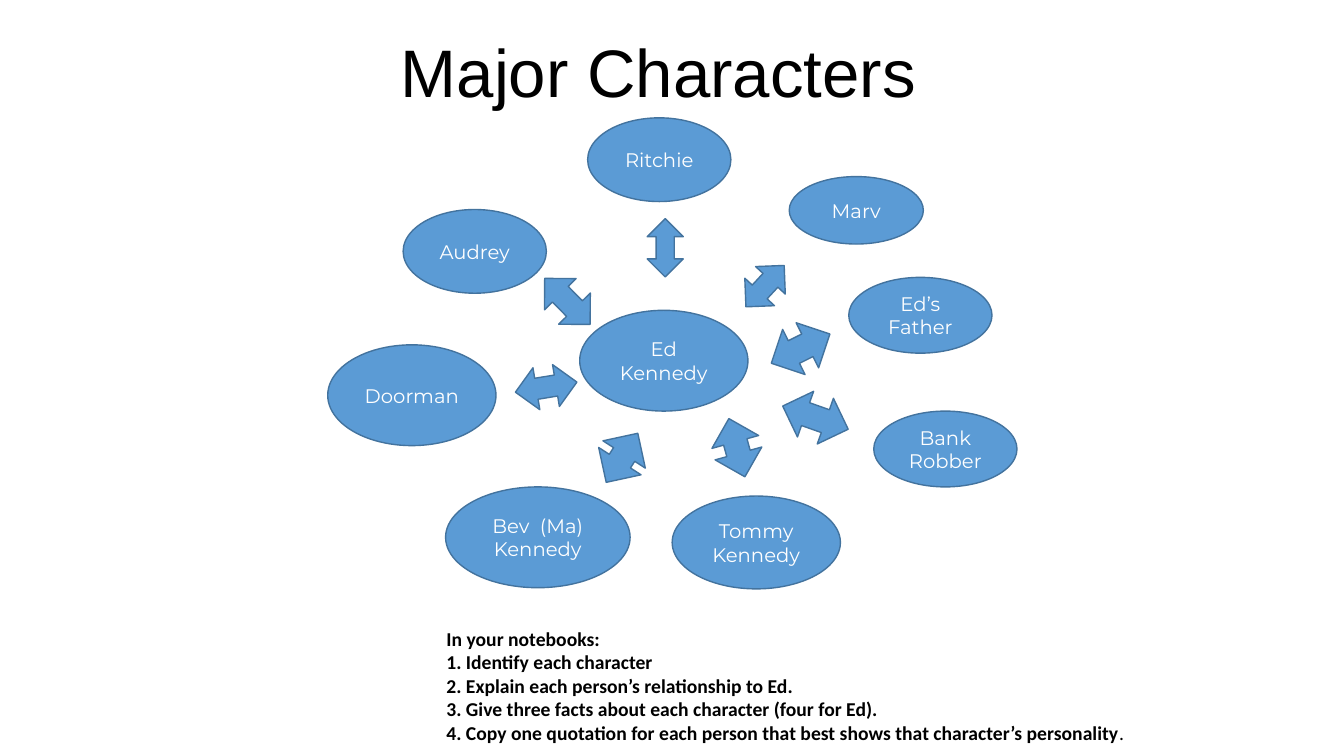
from dataclasses import dataclass

from pptx import Presentation
from pptx.dml.color import RGBColor
from pptx.enum.shapes import MSO_SHAPE
from pptx.enum.text import MSO_ANCHOR, MSO_AUTO_SIZE, PP_ALIGN
from pptx.util import Cm, Pt

ELLIPSE = MSO_SHAPE.OVAL
UP_DOWN = MSO_SHAPE.UP_DOWN_ARROW
LEFT_RIGHT = MSO_SHAPE.LEFT_RIGHT_ARROW
MIDDLE = MSO_ANCHOR.MIDDLE
CENTER = PP_ALIGN.CENTER
GROW = MSO_AUTO_SIZE.SHAPE_TO_FIT_TEXT


@dataclass(frozen=True)
class Theme:
    fill: RGBColor = RGBColor(0x5B, 0x9B, 0xD5)
    outline: RGBColor = RGBColor(0x43, 0x73, 0x9E)
    light: RGBColor = RGBColor(0xFF, 0xFF, 0xFF)
    dark: RGBColor = RGBColor(0x00, 0x00, 0x00)
    title_font: str = "Arial"
    name_font: str = "Montserrat"
    task_font: str = "Calibri"
    title_size: int = 48
    body_size: int = 14
    line_width: int = 1


class CharacterMap:
    def __init__(self, page, theme):
        self.page = page
        self.theme = theme

    def add_span(self, para, text, font, size, color, bold=False):
        span = para.add_run()
        span.text = text
        span.font.name = font
        span.font.size = Pt(size)
        span.font.color.rgb = color
        span.font.bold = bold

    def add_figure(self, kind, place, turn=0):
        figure = self.page.shapes.add_shape(kind, *map(Cm, place))
        figure.rotation = turn
        figure.shadow.inherit = False
        figure.fill.solid()
        figure.fill.fore_color.rgb = self.theme.fill
        figure.line.color.rgb = self.theme.outline
        figure.line.width = Pt(self.theme.line_width)
        return figure

    def add_character(self, lines, place):
        frame = self.add_figure(ELLIPSE, place).text_frame
        frame.word_wrap = True
        frame.vertical_anchor = MIDDLE
        for number, line in enumerate(lines):
            para = frame.add_paragraph() if number else frame.paragraphs[0]
            para.alignment = CENTER
            self.add_span(para, line, self.theme.name_font,
                          self.theme.body_size, self.theme.light)

    def add_text_box(self, place):
        box = self.page.shapes.add_textbox(*map(Cm, place))
        box.text_frame.word_wrap = True
        box.text_frame.auto_size = GROW
        return box.text_frame

    def add_title(self, text, place, inset):
        frame = self.add_text_box(place)
        frame.margin_left = Cm(inset)
        self.add_span(frame.paragraphs[0], text, self.theme.title_font,
                      self.theme.title_size, self.theme.dark)

    def add_tasks(self, heading, tasks, place, hanging):
        frame = self.add_text_box(place)
        style = (self.theme.task_font, self.theme.body_size, self.theme.dark)
        self.add_span(frame.paragraphs[0], heading, *style, bold=True)
        for number, (task, ending) in enumerate(tasks, 1):
            para = frame.add_paragraph()
            properties = para._p.get_or_add_pPr()
            properties.set("marL", str(Cm(hanging)))
            properties.set("indent", str(-Cm(hanging)))
            self.add_span(para, f"{number}. {task}", *style, bold=True)
            if ending:
                self.add_span(para, ending, *style)


# Left, top, width and height in centimetres
CHARACTERS = [
    (["Ed Kennedy"], (14.61, 7.82, 4.24, 2.54)),
    (["Ritchie"], (14.81, 2.97, 3.61, 2.11)),
    (["Marv"], (19.89, 4.45, 3.38, 1.7)),
    (["Audrey"], (10.16, 5.28, 3.61, 2.11)),
    (["Doorman"], (8.26, 8.69, 4.24, 2.54)),
    (["Bev  (Ma)", "Kennedy"], (11.23, 12.27, 4.65, 2.54)),
    (["Tommy", "Kennedy"], (16.94, 12.5, 4.24, 2.34)),
    (["Ed’s Father"], (21.39, 6.99, 3.61, 1.91)),
    (["Bank Robber"], (22.02, 10.36, 3.61, 1.91)),
]

# Kind, place before turning, clockwise turn in degrees
ARROWS = [
    (UP_DOWN, (16.31, 5.51, 0.91, 1.47), 0),
    (UP_DOWN, (13.74, 6.78, 1.12, 1.63), 315.4),
    (UP_DOWN, (18.77, 6.5, 1.02, 1.42), 42.8),
    (UP_DOWN, (13.23, 8.97, 1.07, 1.57), 260.7),
    (UP_DOWN, (15.04, 10.8, 1.27, 1.47), 212.8),
    (UP_DOWN, (17.96, 10.52, 1.22, 1.52), 164.6),
    (LEFT_RIGHT, (19.35, 8.15, 1.65, 1.27), 153.5),
    (UP_DOWN, (19.94, 9.65, 1.22, 1.75), 109.5),
]

# Task and its regular-weight ending
TASKS = [
    ("Identify each character", ""),
    ("Explain each person’s relationship to Ed.", ""),
    ("Give three facts about each character (four for Ed).", ""),
    ("Copy one quotation for each person that best shows "
     "that character’s personality", "."),
]


def main():
    deck = Presentation()
    deck.slide_width, deck.slide_height = Cm(33.87), Cm(19.05)
    page = deck.slides.add_slide(deck.slide_layouts[6])
    character_map = CharacterMap(page, Theme())

    # Heading
    character_map.add_title("Major Characters", (6.55, 0.64, 19.69, 2.31), 3.55)

    # Characters around Ed, and the arrows that tie them to him
    for lines, place in CHARACTERS:
        character_map.add_character(lines, place)
    for kind, place, turn in ARROWS:
        character_map.add_figure(kind, place, turn)

    # Notebook tasks
    character_map.add_tasks("In your notebooks:", TASKS,
                            (11, 15.67, 17.78, 3.25), 0.97)

    deck.save("out.pptx")


if __name__ == "__main__":
    main()
